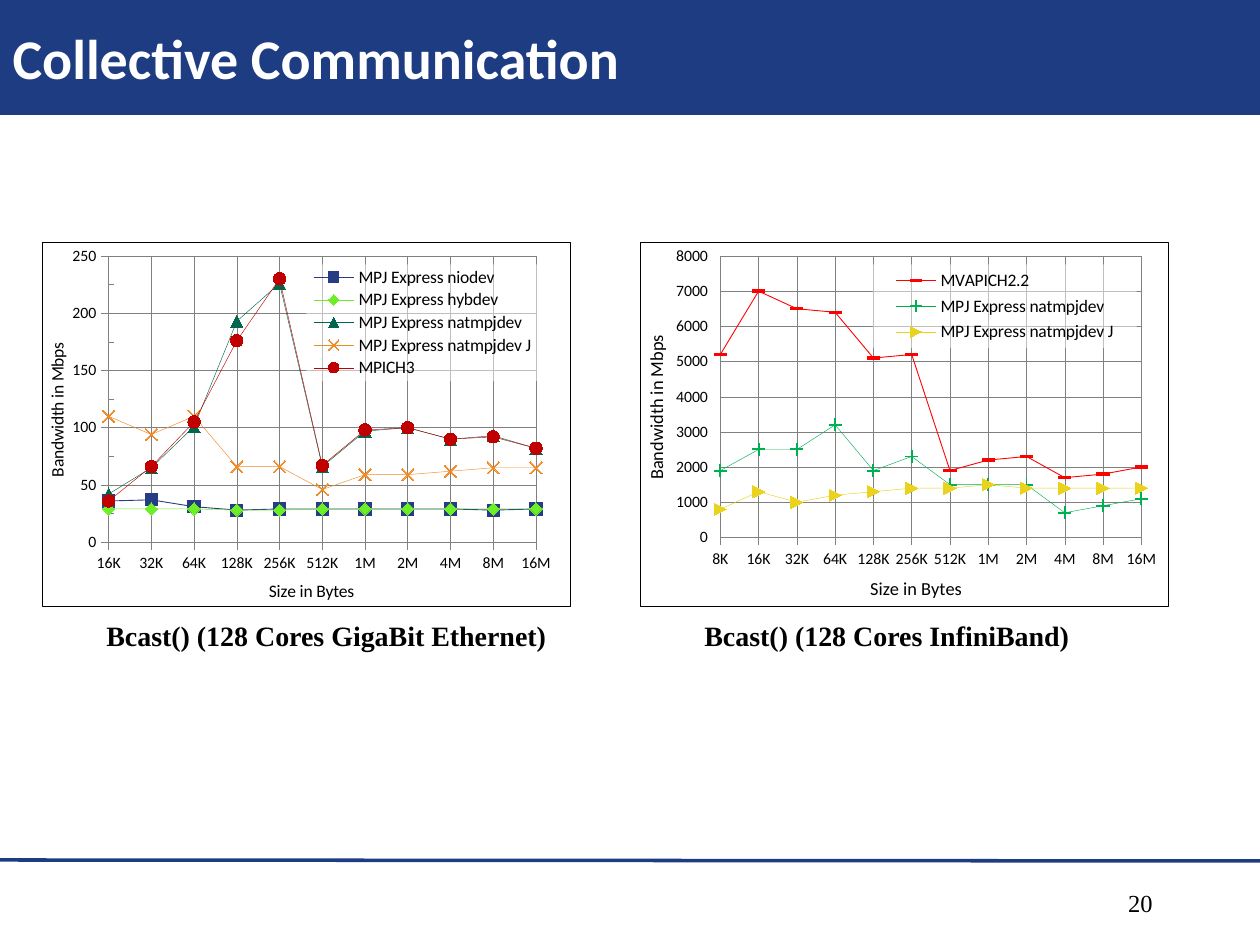
from lxml import etree
from pptx import Presentation, util as u
from pptx.chart.data import CategoryChartData
from pptx.dml.color import RGBColor
from pptx.enum import chart as ch, dml, shapes, text
from pptx.oxml import parse_xml
from pptx.oxml.ns import nsdecls, qn

NAVY = RGBColor(0x1E, 0x3C, 0x82)
WHITE = RGBColor(255, 255, 255)
BLACK = RGBColor(0, 0, 0)
GRAY = RGBColor(0x80, 0x80, 0x80)
BLUE = RGBColor(0x26, 0x3D, 0x86)
LIME = RGBColor(0x6D, 0xEE, 0x26)
TEAL = RGBColor(0x00, 0x66, 0x4D)
AMBER = RGBColor(0xF0, 0x8A, 0x24)
MAROON = RGBColor(0xC0, 0, 0)
RED = RGBColor(255, 0, 0)
GREEN = RGBColor(0, 0xB0, 0x50)
GOLD = RGBColor(0xEB, 0xD2, 0x1D)
MARK = ch.XL_MARKER_STYLE
TICK = ch.XL_TICK_MARK


def px(*nums):
    return [u.Emu(n * 914400 // 126) for n in nums]


def layout(x, y, w, h, inner=False):
    node = etree.Element(qn("c:layout"))
    man = etree.SubElement(node, qn("c:manualLayout"))
    pairs = [("layoutTarget", "inner")] if inner else []
    pairs += [("xMode", "edge"), ("yMode", "edge"), ("x", x), ("y", y), ("w", w), ("h", h)]
    for tag, val in pairs:
        etree.SubElement(man, qn("c:" + tag)).set("val", str(val))
    return node


prs = Presentation()
prs.slide_width, prs.slide_height = px(1260, 945)
slide = prs.slides.add_slide(prs.slide_layouts[5])

rule = slide.shapes.add_connector(shapes.MSO_CONNECTOR.STRAIGHT, *px(0, 860, 1260, 861))
rule.line.color.rgb = NAVY
rule.line.width = u.Pt(2)
etree.SubElement(rule._element.spPr, qn("a:effectLst"))

title = slide.shapes.title
title.left, title.top, title.width, title.height = px(0, 0, 1260, 115)
title.fill.solid()
title.fill.fore_color.rgb = NAVY
title.text_frame.text = "Collective Communication"
title.text_frame.vertical_anchor = text.MSO_ANCHOR.MIDDLE
para = title.text_frame.paragraphs[0]
para.alignment = text.PP_ALIGN.LEFT
para.font.name, para.font.size, para.font.bold = "Calibri", u.Pt(32), True
para.font.color.rgb = WHITE

sizes = ["8K", "16K", "32K", "64K", "128K", "256K", "512K", "1M", "2M", "4M", "8M", "16M"]
charts = [
    dict(left=42, size=10, cats=sizes[1:], top=250, step=50,
         plot=(0.125, 0.037, 0.81, 0.787), key=(0.5, 0.06, 0.44, 0.32),
         rows=[
             ("MPJ Express niodev", BLUE, MARK.SQUARE, 0.5,
              [36, 37, 31, 28, 29, 29, 29, 29, 29, 28, 29]),
             ("MPJ Express hybdev", LIME, MARK.DIAMOND, 0.25,
              [29, 29, 29, 28, 28, 29, 29, 29, 29, 29, 29]),
             ("MPJ Express natmpjdev", TEAL, MARK.TRIANGLE, 0.25,
              [42, 65, 101, 193, 226, 66, 97, 100, 90, 93, 82]),
             ("MPJ Express natmpjdev J", AMBER, MARK.X, 0.25,
              [110, 94, 110, 66, 66, 46, 59, 59, 62, 65, 65]),
             ("MPICH3", MAROON, MARK.CIRCLE, 0.25,
              [36, 66, 105, 176, 230, 67, 98, 100, 90, 92, 82]),
         ]),
    dict(left=640, size=10.5, cats=sizes, top=8000, step=1000,
         plot=(0.151, 0.037, 0.798, 0.774), key=(0.44, 0.06, 0.5, 0.23),
         rows=[
             ("MVAPICH2.2", RED, MARK.DASH, 0.5,
              [5200, 7000, 6500, 6400, 5100, 5200, 1900, 2200, 2300, 1700, 1800, 2000]),
             ("MPJ Express natmpjdev", GREEN, MARK.PLUS, 0.25,
              [1900, 2500, 2500, 3200, 1900, 2300, 1500, 1500, 1500, 700, 900, 1100]),
             ("MPJ Express natmpjdev J", GOLD, MARK.DOT, 0.25,
              [800, 1300, 1000, 1200, 1300, 1400, 1400, 1500, 1400, 1400, 1400, 1400]),
         ]),
]

for item in charts:
    data = CategoryChartData()
    data.categories = item["cats"]
    for name, color, mark, width, vals in item["rows"]:
        data.add_series(name, vals)
    chart = slide.shapes.add_chart(
        ch.XL_CHART_TYPE.LINE_MARKERS, *px(item["left"], 242, 529, 365), data).chart
    chart.has_title = False
    chart.font.name, chart.font.size = "Calibri", u.Pt(item["size"])
    chart.font.color.rgb = BLACK
    chart.plots[0].vary_by_categories = False

    for line, (name, color, mark, width, vals) in zip(chart.plots[0].series, item["rows"]):
        line.smooth = False
        line.format.line.color.rgb = color
        line.format.line.width = u.Pt(width)
        line.marker.style, line.marker.size = mark, 7
        line.marker.format.fill.solid()
        line.marker.format.fill.fore_color.rgb = color
        line.marker.format.line.fill.background()

    cat, val = chart.category_axis, chart.value_axis
    for axis, label in ((cat, "Size in Bytes"), (val, "Bandwidth in Mbps")):
        axis.crosses = ch.XL_AXIS_CROSSES.AUTOMATIC
        axis.has_major_gridlines = True
        grid = axis.major_gridlines.format.line
        for stroke in (grid, axis.format.line):
            stroke.color.rgb = GRAY
            stroke.width = u.Pt(0.25)
        grid.dash_style = dml.MSO_LINE.ROUND_DOT
        axis.tick_labels.font.size = u.Pt(9)
        axis.axis_title.text_frame.text = label
        font = axis.axis_title.text_frame.paragraphs[0].font
        font.name, font.size, font.bold = "Calibri", u.Pt(item["size"]), False
        font.color.rgb = BLACK
    cat.major_tick_mark = TICK.CROSS
    val.major_tick_mark = TICK.OUTSIDE
    val.minimum_scale, val.maximum_scale = 0, item["top"]
    val.major_unit = item["step"]
    between = etree.Element(qn("c:crossBetween"), val="midCat")
    val._element.find(qn("c:crosses")).addnext(between)

    chart.has_legend = True
    key = chart.legend
    key.position = ch.XL_LEGEND_POSITION.RIGHT
    key.include_in_layout = True
    key.font.size = u.Pt(10)
    for old in key._element.findall(qn("c:layout")):
        key._element.remove(old)
    key._element.find(qn("c:legendPos")).addnext(layout(*item["key"]))
    key._element.find(qn("c:overlay")).addnext(parse_xml(
        f'<c:spPr {nsdecls("c", "a")}><a:solidFill><a:srgbClr val="{WHITE}">'
        '<a:alpha val="50000"/></a:srgbClr></a:solidFill>'
        '<a:ln><a:noFill/></a:ln></c:spPr>'))

    area = chart._chartSpace.chart.plotArea
    for old in area.findall(qn("c:layout")):
        area.remove(old)
    area.insert(0, layout(*item["plot"], inner=True))
    chart._chartSpace.chart.addnext(parse_xml(
        f'<c:spPr {nsdecls("c", "a")}><a:noFill/><a:ln w="9525"><a:solidFill>'
        f'<a:srgbClr val="{BLACK}"/></a:solidFill></a:ln></c:spPr>'))

    if item["top"] == 250:
        val.minor_tick_mark = TICK.INSIDE
        val.minor_unit = 25
    else:
        val.format.line.fill.background()

LEFT, RIGHT = text.PP_ALIGN.LEFT, text.PP_ALIGN.RIGHT
labels = [
    ("Bcast() (128 Cores GigaBit Ethernet)", (94, 612, 479, 47), 16, True, LEFT),
    ("Bcast() (128 Cores InfiniBand)", (692, 612, 396, 47), 16, True, LEFT),
    ("20", (903, 882, 262, 63), 14, False, RIGHT),
]
for words, place, size, bold, align in labels:
    box = slide.shapes.add_textbox(*px(*place))
    box.text_frame.word_wrap = not bold
    box.text_frame.text = words
    para = box.text_frame.paragraphs[0]
    para.alignment = align
    para.font.name, para.font.size, para.font.bold = "Times New Roman", u.Pt(size), bold
    para.font.color.rgb = BLACK

prs.save("out.pptx")
